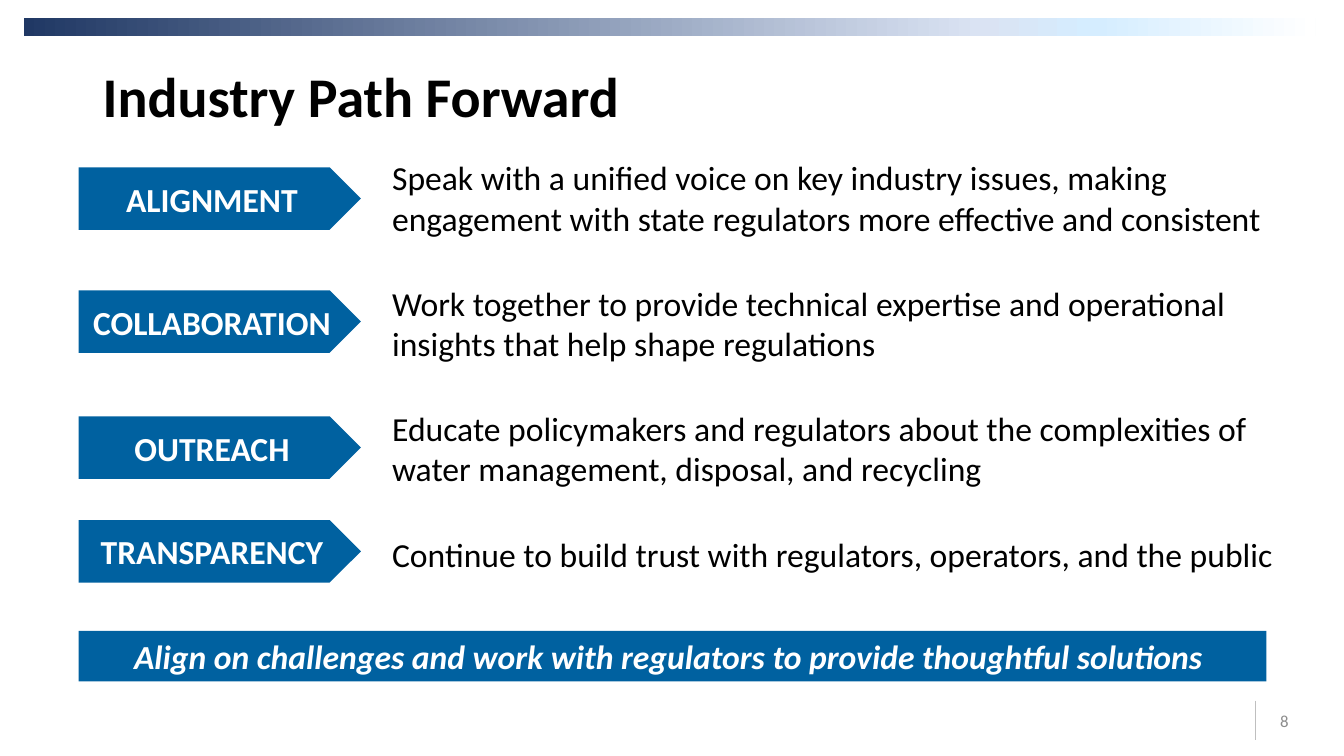
from dataclasses import dataclass

from lxml import etree
from pptx import Presentation
from pptx.dml.color import RGBColor
from pptx.enum.shapes import MSO_CONNECTOR, MSO_SHAPE
from pptx.enum.text import MSO_ANCHOR, PP_ALIGN
from pptx.oxml.ns import qn
from pptx.util import Inches, Pt

RECT, ARROW = MSO_SHAPE.RECTANGLE, MSO_SHAPE.PENTAGON
LINE = MSO_CONNECTOR.STRAIGHT
LEFT, CENTER, RIGHT = PP_ALIGN.LEFT, PP_ALIGN.CENTER, PP_ALIGN.RIGHT
TOP, MIDDLE = MSO_ANCHOR.TOP, MSO_ANCHOR.MIDDLE


@dataclass(frozen=True)
class Theme:
    font: str = "Calibri"
    ink: str = "000000"
    blue: str = "0061A0"
    white: str = "FFFFFF"
    rule: str = "BFBFBF"
    gray: str = "8C8C8C"
    fade: tuple = ((0, "203864"), (74, "DAE3F3"), (83, "D5EDFF"), (100, "FFFFFF"))
    head: int = 40
    body: int = 24
    small: int = 12
    gap: int = 32


class Page:
    def __init__(self, slide, theme):
        self.shapes = slide.shapes
        self.theme = theme

    def fill_text(self, shape, lines, size, color, align=LEFT, anchor=MIDDLE,
                  wrap=True, spacing=1.0, **style):
        frame = shape.text_frame
        frame.word_wrap = wrap
        frame.vertical_anchor = anchor
        for i, line in enumerate(lines):
            para = frame.paragraphs[0] if i == 0 else frame.add_paragraph()
            para.text = line
            form = {"alignment": align, "line_spacing": spacing,
                    "space_before": Pt(self.theme.gap if i else 0)}
            for name, value in form.items():
                setattr(para, name, value)
            face = {"name": self.theme.font, "size": Pt(size), **style}
            for name, value in face.items():
                setattr(para.font, name, value)
            para.font.color.rgb = RGBColor.from_string(color)

    def text(self, box, lines, size, color, **form):
        shape = self.shapes.add_textbox(*map(Inches, box))
        self.fill_text(shape, lines, size, color, **form)

    def block(self, kind, box):
        shape = self.shapes.add_shape(kind, *map(Inches, box))
        shape.shadow.inherit = False
        shape.line.fill.background()
        return shape

    def label(self, kind, box, line, **form):
        shape = self.block(kind, box)
        shape.fill.solid()
        shape.fill.fore_color.rgb = RGBColor.from_string(self.theme.blue)
        self.fill_text(shape, [line], self.theme.body, self.theme.white,
                       align=CENTER, bold=True, **form)
        return shape

    def band(self, box):
        """Draw a bar that fades from left to right through the theme's stops."""
        shape = self.block(RECT, box)
        shape.fill.gradient()
        shape.fill.gradient_angle = 0
        stops = shape._element.spPr.find(qn("a:gradFill")).find(qn("a:gsLst"))
        for stop in list(stops):
            stops.remove(stop)
        for place, color in self.theme.fade:
            stop = etree.SubElement(stops, qn("a:gs"), pos=str(place * 1000))
            etree.SubElement(stop, qn("a:srgbClr"), val=color)

    def rule(self, start, end):
        line = self.shapes.add_connector(LINE, *map(Inches, start + end))
        line.line.color.rgb = RGBColor.from_string(self.theme.rule)
        line.line.width = Pt(1)
        etree.SubElement(line._element.spPr, qn("a:effectLst"))


GOALS = [
    (1.66, "ALIGNMENT", "Speak with a unified voice on key industry issues, making "
     "engagement with state regulators more effective and consistent"),
    (2.88, "COLLABORATION", "Work together to provide technical expertise and "
     "operational insights that help shape regulations"),
    (4.13, "OUTREACH", "Educate policymakers and regulators about the complexities "
     "of water management, disposal, and recycling"),
    (5.16, "TRANSPARENCY", "Continue to build trust with regulators, operators, "
     "and the public"),
]


def main():
    deck = Presentation()
    deck.slide_width, deck.slide_height = Inches(13.33), Inches(7.5)
    theme = Theme()
    page = Page(deck.slides.add_slide(deck.slide_layouts[6]), theme)

    page.band((0.24, 0.18, 12.81, 0.18))
    page.rule((12.45, 6.95), (12.45, 7.34))
    page.text((0.92, 0.4, 11.5, 1.18), ["Industry Path Forward"],
              theme.head, theme.ink, spacing=0.9, bold=True)
    page.text((3.79, 1.51, 9.02, 5.14), [goal for _, _, goal in GOALS],
              theme.body, theme.ink, anchor=TOP)
    page.text((10.18, 6.95, 2.7, 0.4), ["8"], theme.small, theme.gray, align=RIGHT)

    for top, name, _ in GOALS:
        page.label(ARROW, (0.78, top, 2.8, 0.62), name, wrap=False)
    motto = page.label(
        RECT, (0.78, 6.26, 11.78, 0.5),
        "Align on challenges and work with regulators to provide thoughtful solutions",
        italic=True)
    motto.text_frame.margin_right = Inches(0.18)

    deck.save("out.pptx")


if __name__ == "__main__":
    main()
